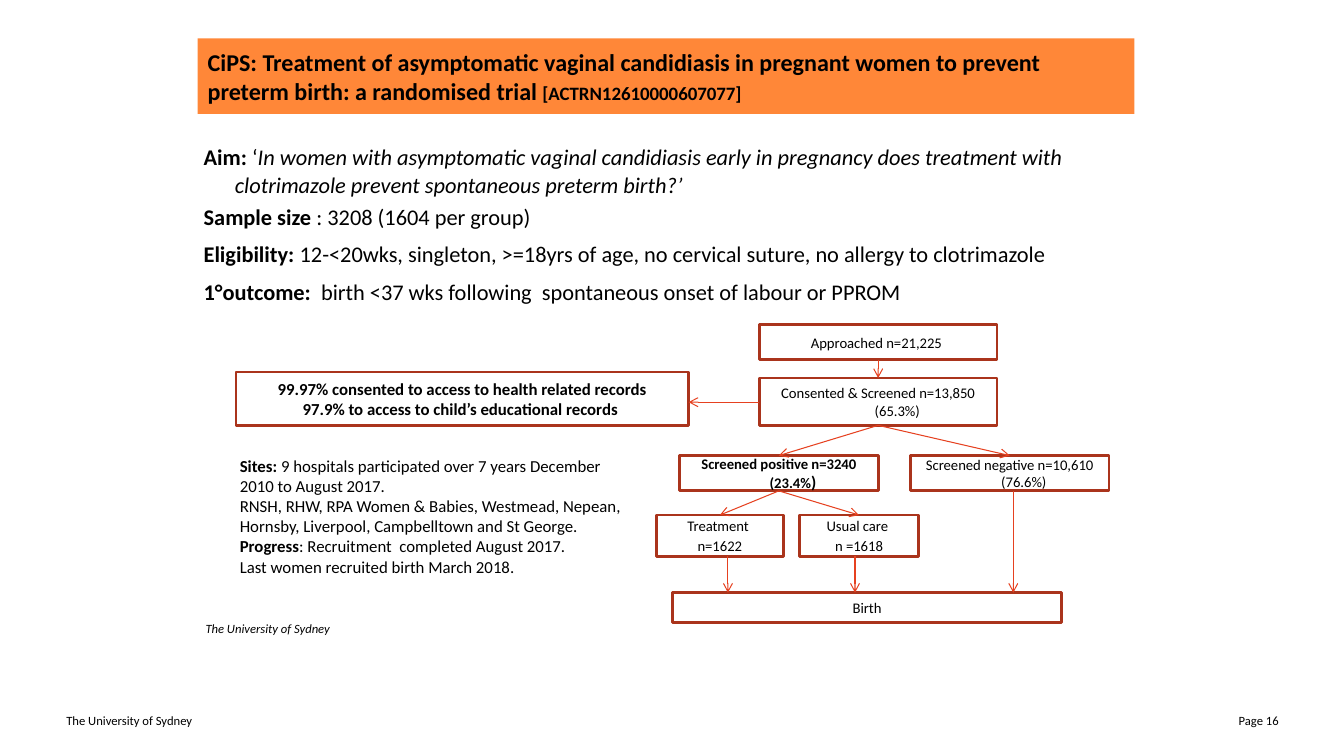
from dataclasses import dataclass
from lxml.etree import SubElement
from pptx import Presentation
from pptx.dml.color import RGBColor
from pptx.enum.shapes import MSO_CONNECTOR, MSO_SHAPE
from pptx.enum.text import MSO_ANCHOR, PP_ALIGN
from pptx.oxml.ns import qn
from pptx.util import Inches, Pt


@dataclass(frozen=True)
class Theme:
    font: str = "Calibri"
    text: RGBColor = RGBColor(0x00, 0x00, 0x00)
    banner: RGBColor = RGBColor(0xFF, 0x66, 0x00)
    banner_alpha: int = 78000
    border: RGBColor = RGBColor(0xAA, 0x34, 0x1C)
    arrow: RGBColor = RGBColor(0xE6, 0x41, 0x20)
    title: float = 17.2
    registration: float = 13.5
    body: float = 16
    sites: float = 12
    box: float = 10.5
    footer: float = 9


THEME = Theme()
BOLD, ITALIC = {"bold": True}, {"italic": True}

UNIVERSITY = "The University of Sydney"
TITLE = [[
    ("CiPS: Treatment of asymptomatic vaginal candidiasis in pregnant women to prevent "
     "preterm birth: a randomised trial ", {}),
    ("[ACTRN12610000607077]", {"size": Pt(THEME.registration)}),
]]
SUMMARY = [
    [("Aim: ", BOLD), ("‘", {}),
     ("In women with asymptomatic vaginal candidiasis early in pregnancy does treatment with "
      "clotrimazole prevent spontaneous preterm birth?’", ITALIC)],
    [("Sample size ", BOLD), (": 3208 (1604 per group)", {})],
    [("Eligibility: ", BOLD),
     ("12-<20wks, singleton, >=18yrs of age, no cervical suture, no allergy to clotrimazole", {})],
    [("1°outcome: ", BOLD),
     (" birth <37 wks following  spontaneous onset of labour or PPROM", {})],
]
SITES = [
    [("Sites:", BOLD), (" 9 hospitals participated over 7 years December 2010 to August 2017.", {})],
    [("RNSH, RHW, RPA Women & Babies, Westmead, Nepean, Hornsby, Liverpool, "
      "Campbelltown and St George.", {})],
    [("Progress", BOLD), (": Recruitment  completed August 2017.", {})],
    [("Last women recruited birth March 2018.", {})],
]
RECORDS = [
    [("99.97% consented to access to health related records", {})],
    [("97.9% to access to child’s educational records ", {})],
]
FLOW = {
    "approached": ((7.53, 3.22, 2.36, 0.35), 0, [[("Approached n=21,225 ", {})]]),
    "consented": ((7.53, 3.75, 2.36, 0.47), 0.38, [[("Consented & Screened n=13,850 (65.3%)", {})]]),
    "positive": ((6.74, 4.52, 1.97, 0.35), 0.28,
                 [[("Screened positive n=3240 (23.4%", BOLD), (")", {"bold": True, "size": Pt(12)})]]),
    "negative": ((9.03, 4.52, 1.97, 0.35), 0.28, [[("Screened negative n=10,610 (76.6%)", {})]]),
    "treatment": ((6.51, 5.11, 1.26, 0.41), 0.28, [[("Treatment ", {})], [("n=1622", {})]]),
    "usual care": ((7.93, 5.11, 1.18, 0.41), 0.28, [[("Usual care ", {})], [("n =1618", {})]]),
    "birth": ((6.67, 5.88, 3.86, 0.3), 0.28, [[("Birth", {})]]),
}
BRANCHES = [("approached", "consented"), ("consented", "positive"), ("consented", "negative"),
            ("positive", "treatment"), ("positive", "usual care")]
DROPS = [("treatment", 7.22), ("usual care", 8.48), ("negative", 10.05)]
RECORDS_ARROW_Y = 3.99
TOP_SITE, BOTTOM_SITE = 0, 2


def write(shape, paragraphs, size, align=PP_ALIGN.LEFT, anchor=MSO_ANCHOR.MIDDLE,
          hanging=0, before=0, after=0, font_style=None):
    frame = shape.text_frame
    frame.word_wrap = True
    frame.vertical_anchor = anchor
    for index, runs in enumerate(paragraphs):
        paragraph = frame.add_paragraph() if index else frame.paragraphs[0]
        paragraph.alignment = align
        paragraph.space_before = Pt(before if index else 0)
        paragraph.space_after = Pt(after if index else 0)
        if hanging:
            properties = paragraph._p.get_or_add_pPr()
            properties.set("marL", str(Inches(hanging)))
            properties.set("indent", str(-Inches(hanging)))
        style(paragraph.font, size=Pt(size), name=THEME.font, **(font_style or {}))
        paragraph.font.color.rgb = THEME.text
        for text, run_style in runs:
            run = paragraph.add_run()
            run.text = text
            style(run.font, **run_style)
    return frame


def style(font, **settings):
    for name, value in settings.items():
        setattr(font, name, value)


def add_text(slide, bounds, paragraphs, size, **options):
    textbox = slide.shapes.add_textbox(*map(Inches, bounds))
    return write(textbox, paragraphs, size, **options)


def add_box(slide, bounds, paragraphs, size, **options):
    box = slide.shapes.add_shape(MSO_SHAPE.RECTANGLE, *map(Inches, bounds))
    box.shadow.inherit = False
    box.fill.background()
    box.line.color.rgb = THEME.border
    box.line.width = Pt(2)
    write(box, paragraphs, size, align=PP_ALIGN.CENTER, **options)
    return box


def add_arrow(slide, start_x, start_y, end_x, end_y):
    arrow = slide.shapes.add_connector(MSO_CONNECTOR.STRAIGHT, start_x, start_y, end_x, end_y)
    arrow.line.color.rgb = THEME.arrow
    arrow.line.width = Pt(0.75)
    SubElement(arrow.line._get_or_add_ln(), qn("a:tailEnd"), type="arrow")
    SubElement(arrow._element.spPr, qn("a:effectLst"))
    return arrow


def add_title(slide):
    title = slide.shapes.title
    title.left, title.top, title.width, title.height = map(Inches, (1.96, 0.38, 9.29, 0.75))
    title.fill.solid()
    title.fill.fore_color.rgb = THEME.banner
    color = title._element.spPr.find(qn("a:solidFill"))[0]
    SubElement(color, qn("a:alpha"), val=str(THEME.banner_alpha))
    write(title, TITLE, THEME.title, font_style=BOLD)


def add_flow(slide):
    boxes = {name: add_box(slide, bounds, paragraphs, THEME.box, hanging=hanging, before=2.1)
             for name, (bounds, hanging, paragraphs) in FLOW.items()}
    records = add_box(slide, (2.34, 3.69, 4.49, 0.53), RECORDS, THEME.sites, font_style=BOLD)
    for source, target in BRANCHES:
        arrow = add_arrow(slide, 0, 0, 0, 0)
        arrow.begin_connect(boxes[source], BOTTOM_SITE)
        arrow.end_connect(boxes[target], TOP_SITE)
    for source, x in DROPS:
        box = boxes[source]
        add_arrow(slide, Inches(x), box.top + box.height, Inches(x), boxes["birth"].top)
    y = Inches(RECORDS_ARROW_Y)
    add_arrow(slide, boxes["consented"].left, y, records.left + records.width, y)


def main():
    """Build the CiPS trial summary slide."""
    presentation = Presentation()
    presentation.slide_width, presentation.slide_height = Inches(13.33), Inches(7.5)
    slide = presentation.slides.add_slide(presentation.slide_layouts[5])
    add_title(slide)
    add_text(slide, (0.56, 6.95, 3.11, 0.4), [[(UNIVERSITY, {})]], THEME.footer)
    add_text(slide, (9.67, 6.95, 3.11, 0.4), [[("Page 16", {})]], THEME.footer, align=PP_ALIGN.RIGHT)
    add_text(slide, (1.94, 6.11, 3.23, 0.25), [[(UNIVERSITY, {})]], THEME.footer,
             anchor=MSO_ANCHOR.TOP, font_style=ITALIC)
    summary = add_text(slide, (2.02, 1.33, 9.45, 1.3), SUMMARY, THEME.body,
                       anchor=MSO_ANCHOR.TOP, hanging=0.31, before=3.2, after=4.5)
    summary.margin_left, summary.margin_top, summary.margin_right = 0, Inches(0.08), Inches(0.08)
    summary.paragraphs[0].line_spacing = 1.05
    add_text(slide, (2.28, 4.47, 4.15, 1.32), SITES, THEME.sites, anchor=MSO_ANCHOR.TOP)
    add_flow(slide)
    presentation.save("out.pptx")


if __name__ == "__main__":
    main()
